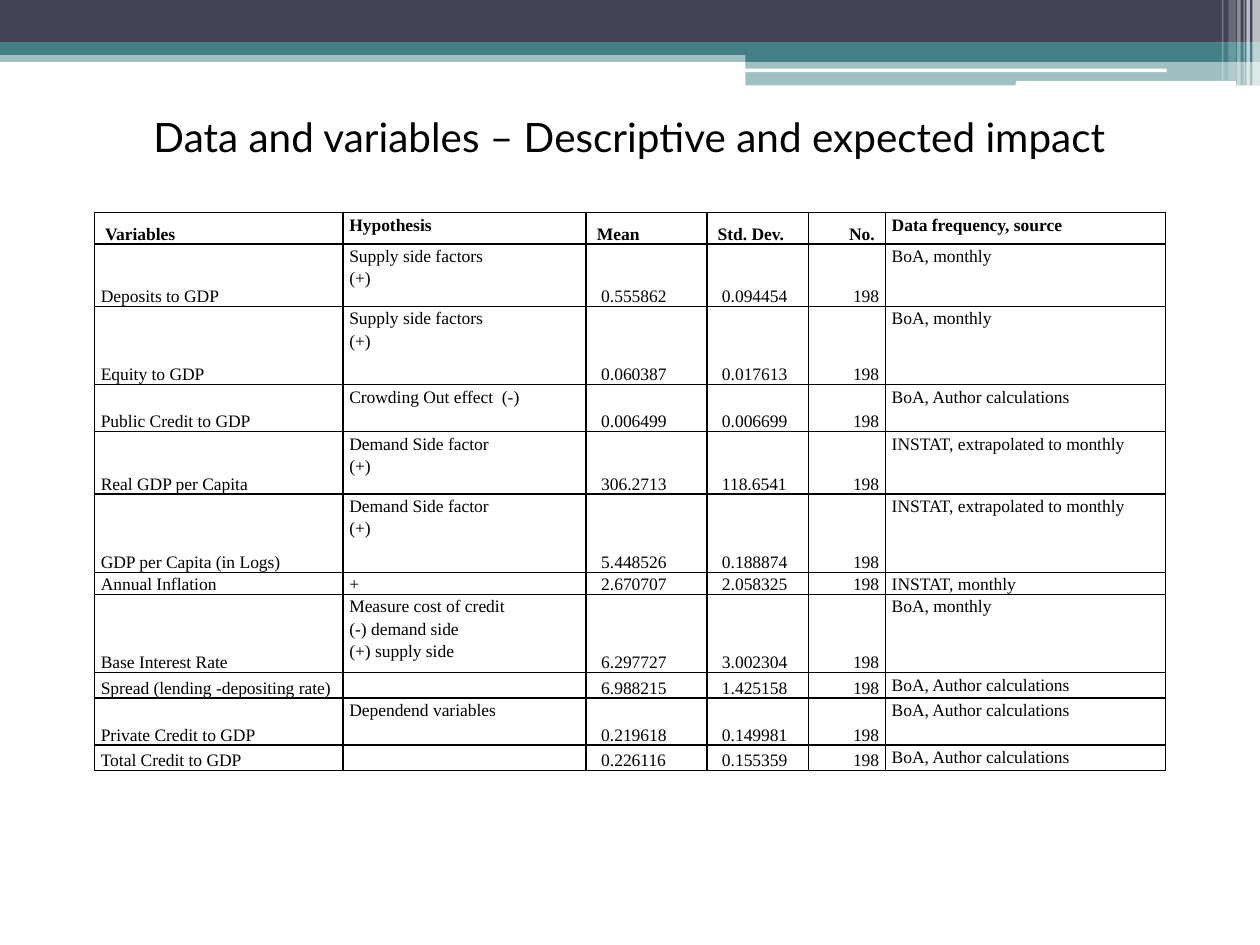
from lxml.etree import SubElement
from pptx import Presentation
from pptx.dml.color import RGBColor
from pptx.enum.shapes import MSO_SHAPE
from pptx.enum.text import MSO_ANCHOR, PP_ALIGN
from pptx.oxml.ns import qn
from pptx.util import Pt

COLORS = {"navy": "424456", "teal": "438086", "white": "FFFFFF", "black": "000000"}
FONT = "Times New Roman"

prs = Presentation()
prs.slide_width, prs.slide_height = Pt(720), Pt(540)
s = prs.slides.add_slide(prs.slide_layouts[5])

# Header bands and the fading stripes in the top right corner
RECT, ROUND = MSO_SHAPE.RECTANGLE, MSO_SHAPE.ROUNDED_RECTANGLE
bands = [
    # shape, left, top, width, height, colour, opacity in percent
    (RECT, 0, 28.8, 720, 6.6, "teal", 50),
    (RECT, 0, 0, 720, 24.4, "navy", 100),
    (RECT, 0, 24.3, 720, 7.1, "teal", 100),
    (RECT, 426, 28.3, 294, 7.1, "teal", 100),
    (RECT, 426, 34.7, 294, 14.1, "teal", 50),
    (ROUND, 425.5, 39.2, 241.2, 2, "white", 100),
    (ROUND, 580.4, 46.3, 126, 2.9, "white", 100),
    (RECT, 715.6, 0, 4.4, 49, "white", 65),
    (RECT, 712.2, 0, 2, 49, "white", 65),
    (RECT, 710.6, 0, 0.7, 49, "white", 60),
    (RECT, 707, 0, 2, 49, "white", 40),
    (RECT, 702, 0, 4.3, 46, "white", 20),
    (RECT, 698.4, 0, 0.7, 46, "white", 30),
]
for kind, left, top, width, height, color, opacity in bands:
    sp = s.shapes.add_shape(kind, Pt(left), Pt(top), Pt(width), Pt(height))
    sp.shadow.inherit = False
    sp.line.fill.background()
    sp.fill.solid()
    sp.fill.fore_color.rgb = RGBColor.from_string(COLORS[color])
    if opacity < 100:
        clr = sp.fill._xPr.find(".//" + qn("a:srgbClr"))
        SubElement(clr, qn("a:alpha"), val=str(opacity * 1000))

title = s.shapes.title
title.left, title.top, title.width, title.height = Pt(54), Pt(58.3), Pt(612), Pt(39.6)
tf = title.text_frame
tf.vertical_anchor = MSO_ANCHOR.MIDDLE
p = tf.paragraphs[0]
p.alignment = PP_ALIGN.CENTER
r = p.add_run()
r.text = "Data and variables – Descriptive and expected impact"
r.font.name, r.font.size = "Lato", Pt(23.1)
r.font.color.rgb = RGBColor.from_string(COLORS["black"])

# A line break in a cell starts a new paragraph
rows = [
    ("Variables", "Hypothesis", "Mean", "Std. Dev.", "No.", "Data frequency, source"),
    ("Deposits to GDP", "Supply side factors\n(+)", "0.555862", "0.094454", "198", "BoA, monthly"),
    ("Equity to GDP", "Supply side factors\n(+)", "0.060387", "0.017613", "198", "BoA, monthly"),
    ("Public Credit to GDP", "Crowding Out effect  (-)", "0.006499", "0.006699", "198",
     "BoA, Author calculations"),
    ("Real GDP per Capita", "Demand Side factor\n(+)", "306.2713", "118.6541", "198",
     "INSTAT, extrapolated to monthly"),
    ("GDP per Capita (in Logs)", "Demand Side factor\n(+)", "5.448526", "0.188874", "198",
     "INSTAT, extrapolated to monthly"),
    ("Annual Inflation", "+", "2.670707", "2.058325", "198", "INSTAT, monthly"),
    ("Base Interest Rate", "Measure cost of credit\n(-) demand side\n(+) supply side",
     "6.297727", "3.002304", "198", "BoA, monthly"),
    ("Spread (lending -depositing rate)", "", "6.988215", "1.425158", "198",
     "BoA, Author calculations"),
    ("Private Credit to GDP", "Dependend variables", "0.219618", "0.149981", "198",
     "BoA, Author calculations"),
    ("Total Credit to GDP", "", "0.226116", "0.155359", "198", "BoA, Author calculations"),
]
col_widths = [142, 139, 69, 58, 44, 160]
row_heights = [18, 35.7, 44.7, 26.8, 35.7, 44.7, 10.8, 44.7, 14.6, 26.8, 14.6]
HYPOTHESIS, MEAN, STD_DEV, COUNT, SOURCE = range(1, 6)

frame = s.shapes.add_table(len(rows), len(col_widths), Pt(54), Pt(121.5),
                           Pt(sum(col_widths)), Pt(sum(row_heights)))
table = frame.table
table.first_row = table.horz_banding = False
for col, width in zip(table.columns, col_widths):
    col.width = Pt(width)
for row, height in zip(table.rows, row_heights):
    row.height = Pt(height)

for i, row in enumerate(rows):
    for j, text in enumerate(row):
        cell = table.cell(i, j)
        left = right = 3.6
        if i == 0 and j in (0, MEAN, STD_DEV):
            left += 2.5
        elif j in (MEAN, STD_DEV):
            left += 5
        elif i == 0 and j == COUNT:
            right += 2.5
        cell.margin_left, cell.margin_right = Pt(left), Pt(right)
        cell.margin_top = cell.margin_bottom = 0
        top_aligned = j in (HYPOTHESIS, SOURCE)
        cell.vertical_anchor = MSO_ANCHOR.TOP if top_aligned else MSO_ANCHOR.BOTTOM

        tcPr = cell._tc.get_or_add_tcPr()
        for side in ("lnL", "lnR", "lnT", "lnB"):
            ln = SubElement(tcPr, qn("a:" + side), w=str(Pt(1)))
            fill = SubElement(ln, qn("a:solidFill"))
            SubElement(fill, qn("a:srgbClr"), val=COLORS["black"])
        cell.fill.background()

        tf = cell.text_frame
        for k, line in enumerate(text.split("\n")):
            p = tf.add_paragraph() if k else tf.paragraphs[0]
            p.line_spacing = 1.15
            p.alignment = PP_ALIGN.RIGHT if j == COUNT else PP_ALIGN.LEFT
            if not line:
                SubElement(p._p, qn("a:endParaRPr"), sz="1000")
                continue
            r = p.add_run()
            r.text = line
            r.font.name, r.font.size, r.font.bold = FONT, Pt(10), i == 0
            r.font.color.rgb = RGBColor.from_string(COLORS["black"])

prs.save("out.pptx")
